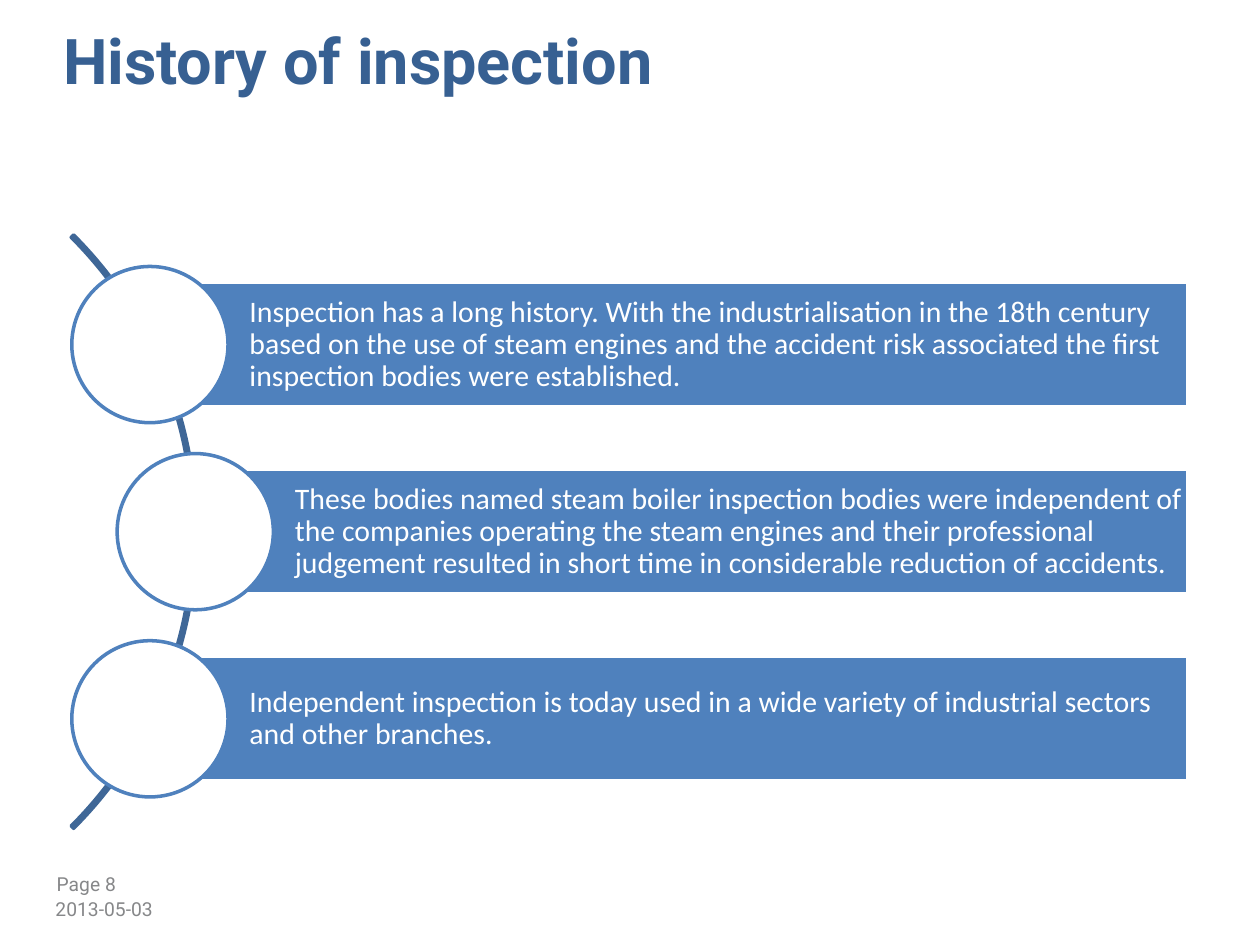
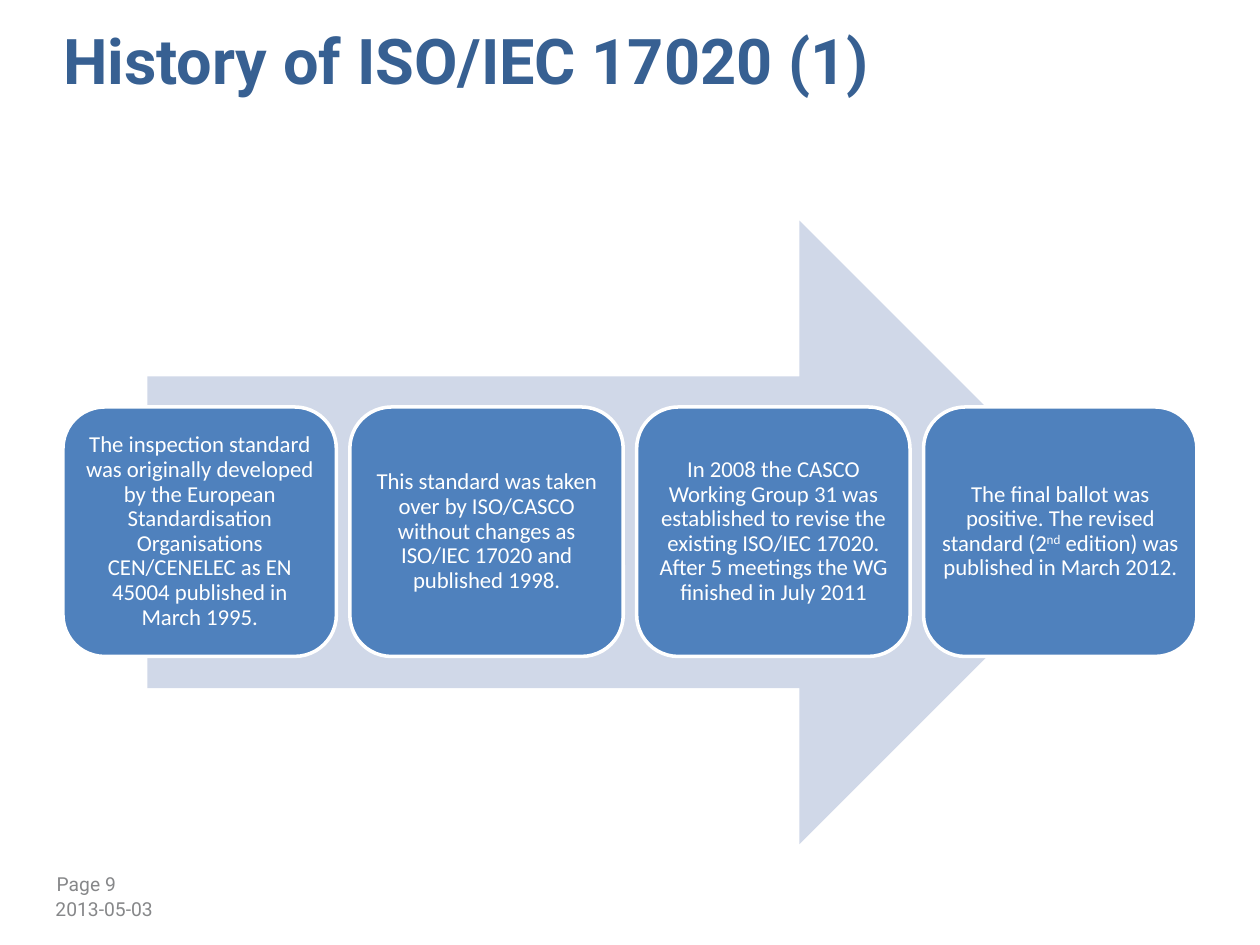
from dataclasses import dataclass
from typing import Optional

from pptx import Presentation
from pptx.dml.color import RGBColor
from pptx.enum.shapes import MSO_SHAPE
from pptx.enum.text import MSO_ANCHOR, PP_ALIGN
from pptx.presentation import Presentation as Deck
from pptx.shapes.autoshape import Shape
from pptx.slide import Slide
from pptx.text.text import TextFrame
from pptx.util import Emu, Inches, Pt

COLUMNS, ROWS = 100, 75
CELL = Inches(0.1)
TITLE_ONLY = 5


@dataclass(frozen=True)
class Theme:
    title_color: RGBColor = RGBColor(0x37, 0x60, 0x92)
    footer_color: RGBColor = RGBColor(0x86, 0x87, 0x89)
    accent: RGBColor = RGBColor(0x4F, 0x81, 0xBD)
    arc: RGBColor = RGBColor(0x3F, 0x67, 0x97)
    pale: RGBColor = RGBColor(0xD0, 0xD8, 0xE8)
    white: RGBColor = RGBColor(0xFF, 0xFF, 0xFF)
    heading_font: str = "Roboto"
    body_font: str = "Calibri"
    title_size: int = 36
    title_leading: int = 34
    bar_size: int = 17
    card_size: int = 13
    footer_size: int = 11
    outline: int = 2


@dataclass(frozen=True)
class Area:
    column: float
    row: float
    columns: float
    rows: float

    def lengths(self) -> tuple[Emu, ...]:
        return tuple(Emu(round(cells * CELL)) for cells in
                     (self.column, self.row, self.columns, self.rows))


@dataclass(frozen=True)
class TextStyle:
    font: str
    size: int
    color: RGBColor
    bold: bool = False
    alignment: PP_ALIGN = PP_ALIGN.LEFT
    line_spacing: Optional[float] = None


@dataclass(frozen=True)
class HistoryBar:
    column: float
    text: str


THEME = Theme()
TITLE_STYLE = TextStyle(THEME.heading_font, THEME.title_size, THEME.title_color,
                        bold=True, line_spacing=Pt(THEME.title_leading))
FOOTER_STYLE = TextStyle(THEME.heading_font, THEME.footer_size, THEME.footer_color)
BAR_STYLE = TextStyle(THEME.body_font, THEME.bar_size, THEME.white, line_spacing=0.9)
CARD_STYLE = TextStyle(THEME.body_font, THEME.card_size, THEME.white,
                       alignment=PP_ALIGN.CENTER, line_spacing=0.9)

TITLE_AREA = Area(5, 3, 90, 12.5)
PAGE_AREA = Area(4.5, 69.2, 23.3, 4)
DATE_AREA = Area(4.4, 71.2, 61.5, 3.6)
DATE = "2013-05-03"
FIRST_PAGE = 8

ARC_AREA = Area(-51, 8.9, 66.6, 66.6)
ARC_ADJUSTMENTS = (189, 27, 0.004)
BAR_TOP, BAR_PITCH, BAR_ROWS, BAR_RIGHT = 22.4, 14.85, 9.9, 94.3
CIRCLE_CELLS = 12.4
HISTORY_BARS = (
    HistoryBar(11.9, "Inspection has a long history. With the industrialisation in the "
                     "18th century based on the use of steam engines and the accident "
                     "risk associated the first inspection bodies were established."),
    HistoryBar(15.5, "These bodies named steam boiler inspection bodies were independent "
                     "of the companies operating the steam engines and their professional "
                     "judgement resulted in short time in considerable reduction of "
                     "accidents."),
    HistoryBar(11.9, "Independent inspection is today used in a wide variety of "
                     "industrial sectors and other branches."),
)

ARROW_AREA = Area(11.7, 17.5, 76.5, 49.5)
CARD_ROW, CARD_COLUMNS, CARD_ROWS = 32.3, 21.7, 19.8
SUPERSCRIPT_MARK = "^"
STANDARD_CARDS = (
    "The inspection standard was originally developed by the European Standardisation "
    "Organisations CEN/CENELEC as EN 45004 published in March 1995.",
    "This standard was taken over by ISO/CASCO without changes as ISO/IEC 17020 and "
    "published 1998.",
    "In 2008 the CASCO Working Group 31 was established to revise the existing "
    "ISO/IEC 17020. After 5 meetings the WG finished in July 2011",
    "The final ballot was positive. The revised standard (2^nd^ edition) was published "
    "in March 2012.",
)


def write_text(text_frame: TextFrame, text: str, style: TextStyle,
               anchor: MSO_ANCHOR = MSO_ANCHOR.TOP,
               insets: tuple[float, float, float, float] = (0, 0, 0, 0)) -> None:
    text_frame.word_wrap = True
    text_frame.vertical_anchor = anchor
    (text_frame.margin_left, text_frame.margin_top,
     text_frame.margin_right, text_frame.margin_bottom) = map(Inches, insets)
    paragraph = text_frame.paragraphs[0]
    paragraph.alignment = style.alignment
    paragraph.line_spacing = style.line_spacing
    for position, part in enumerate(text.split(SUPERSCRIPT_MARK)):
        run = paragraph.add_run()
        run.text = part
        run.font.name = style.font
        run.font.size = Pt(style.size)
        run.font.bold = style.bold
        run.font.color.rgb = style.color
        if position % 2:
            run._r.get_or_add_rPr().set("baseline", "30000")


def add_figure(slide: Slide, kind: MSO_SHAPE, area: Area,
               fill: Optional[RGBColor] = None,
               line: Optional[RGBColor] = None) -> Shape:
    shape = slide.shapes.add_shape(kind, *area.lengths())
    shape.shadow.inherit = False
    if fill is None:
        shape.fill.background()
    else:
        shape.fill.solid()
        shape.fill.fore_color.rgb = fill
    if line is None:
        shape.line.fill.background()
    else:
        shape.line.color.rgb = line
        shape.line.width = Pt(THEME.outline)
    return shape


def add_titled_slide(presentation: Deck, title: str) -> Slide:
    slide = presentation.slides.add_slide(presentation.slide_layouts[TITLE_ONLY])
    heading = slide.shapes.title
    heading.left, heading.top, heading.width, heading.height = TITLE_AREA.lengths()
    write_text(heading.text_frame, title, TITLE_STYLE)
    page = FIRST_PAGE + len(presentation.slides) - 1
    for area, text in ((PAGE_AREA, f"Page {page}"), (DATE_AREA, DATE)):
        footer = slide.shapes.add_textbox(*area.lengths())
        write_text(footer.text_frame, text, FOOTER_STYLE)
    return slide


def add_history_bar(slide: Slide, bar: HistoryBar, row: float) -> None:
    area = Area(bar.column, row, BAR_RIGHT - bar.column, BAR_ROWS)
    rectangle = add_figure(slide, MSO_SHAPE.RECTANGLE, area, THEME.accent, THEME.white)
    write_text(rectangle.text_frame, bar.text, BAR_STYLE, MSO_ANCHOR.MIDDLE,
               (0.79, 0.05, 0.04, 0.05))
    circle_area = Area(bar.column - CIRCLE_CELLS / 2,
                       row + (BAR_ROWS - CIRCLE_CELLS) / 2, CIRCLE_CELLS, CIRCLE_CELLS)
    add_figure(slide, MSO_SHAPE.OVAL, circle_area, THEME.white, THEME.accent)


def build_inspection_history(presentation: Deck) -> None:
    slide = add_titled_slide(presentation, "History of inspection")
    arc = add_figure(slide, MSO_SHAPE.BLOCK_ARC, ARC_AREA, line=THEME.arc)
    for index, value in enumerate(ARC_ADJUSTMENTS):
        arc.adjustments[index] = value
    for index, bar in enumerate(HISTORY_BARS):
        add_history_bar(slide, bar, BAR_TOP + index * BAR_PITCH)


def build_standard_history(presentation: Deck) -> None:
    slide = add_titled_slide(presentation, "History of ISO/IEC 17020 (1)")
    add_figure(slide, MSO_SHAPE.RIGHT_ARROW, ARROW_AREA, THEME.pale)
    pitch = (TITLE_AREA.columns - CARD_COLUMNS) / (len(STANDARD_CARDS) - 1)
    for index, text in enumerate(STANDARD_CARDS):
        area = Area(TITLE_AREA.column + index * pitch, CARD_ROW, CARD_COLUMNS, CARD_ROWS)
        card = add_figure(slide, MSO_SHAPE.ROUNDED_RECTANGLE, area,
                          THEME.accent, THEME.white)
        write_text(card.text_frame, text, CARD_STYLE, MSO_ANCHOR.MIDDLE, (0.05,) * 4)


def main() -> None:
    presentation = Presentation()
    presentation.slide_width = COLUMNS * CELL
    presentation.slide_height = ROWS * CELL
    build_inspection_history(presentation)
    build_standard_history(presentation)
    presentation.save("out.pptx")


if __name__ == "__main__":
    main()
